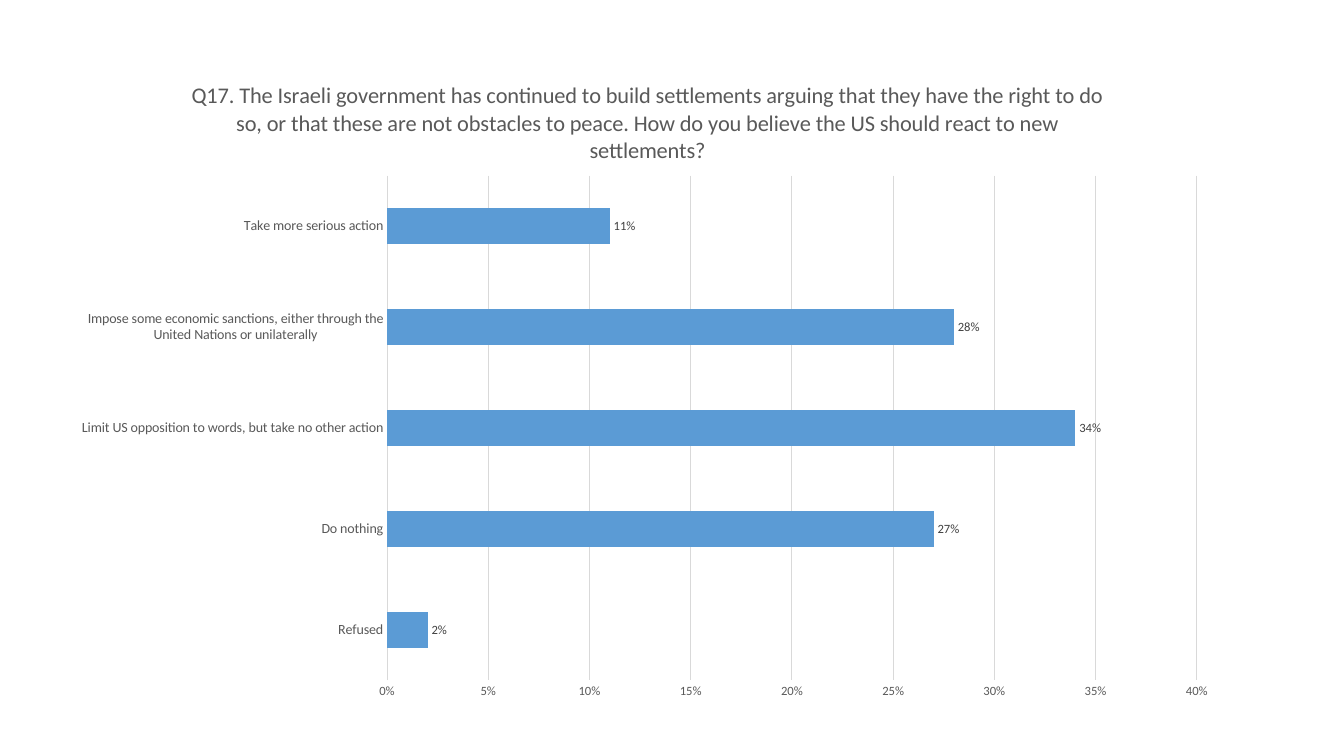
from dataclasses import dataclass

from pptx import Presentation
from pptx.chart.data import CategoryChartData
from pptx.dml.color import RGBColor
from pptx.enum.chart import XL_CHART_TYPE, XL_LABEL_POSITION, XL_TICK_MARK
from pptx.oxml import parse_xml
from pptx.oxml.ns import nsdecls, qn
from pptx.util import Inches, Pt


@dataclass(frozen=True)
class Theme:
    font: str = "Calibri"
    text: RGBColor = RGBColor(0x59, 0x59, 0x59)
    label: RGBColor = RGBColor(0x40, 0x40, 0x40)
    grid: RGBColor = RGBColor(0xD9, 0xD9, 0xD9)
    bar: RGBColor = RGBColor(0x5B, 0x9B, 0xD5)
    title_size: Pt = Pt(16)
    category_size: Pt = Pt(10)
    small_size: Pt = Pt(9)
    line_width: Pt = Pt(0.75)


theme = Theme()


def style_font(font, size, color):
    font.name = theme.font
    font.size = size
    font.bold = False
    font.color.rgb = color


def set_layout(element, index, target, **fractions):
    for old in element.findall(qn("c:layout")):
        element.remove(old)
    inner = f'<c:layoutTarget val="{target}"/>' if target else ""
    modes = "".join(f'<c:{k}Mode val="edge"/>' for k in "xy")
    values = "".join(f'<c:{k} val="{v}"/>' for k, v in fractions.items())
    element.insert(index, parse_xml(
        f'<c:layout {nsdecls("c")}><c:manualLayout>{inner}{modes}{values}'
        "</c:manualLayout></c:layout>"))


prs = Presentation()
prs.slide_width = Inches(13.33)
prs.slide_height = Inches(7.5)
s = prs.slides.add_slide(prs.slide_layouts[6])

responses = {
    "Refused": 0.02,
    "Do nothing": 0.27,
    "Limit US opposition to words, but take no other action": 0.34,
    "Impose some economic sanctions, either through the United Nations or unilaterally": 0.28,
    "Take more serious action": 0.11,
}
data = CategoryChartData(number_format="0%")
data.categories = list(responses)
data.add_series("Series 1", list(responses.values()))

chart = s.shapes.add_chart(
    XL_CHART_TYPE.BAR_CLUSTERED,
    Inches(0.58), Inches(0.49), Inches(11.64), Inches(6.59), data).chart
style_font(chart.font, theme.category_size, theme.text)
chart.has_legend = False

chart.has_title = True
title = chart.chart_title
title.include_in_layout = False
p = title.text_frame.paragraphs[0]
p.text = (
    "Q17. The Israeli government has continued to build settlements arguing "
    "that they have the right to do so, or that these are not obstacles to peace. "
    "How do you believe the US should react to new settlements?")
style_font(p.font, theme.title_size, theme.text)
set_layout(title._element, 1, None, x=0.11, y=0.04)

plot = chart.plots[0]
plot.gap_width = 182
plot.vary_by_categories = False
set_layout(chart._chartSpace.chart.plotArea, 0, "inner", x=0.28, y=0.19, w=0.69, h=0.76)

series = plot.series[0]
series.format.fill.solid()
series.format.fill.fore_color.rgb = theme.bar

plot.has_data_labels = True
labels = plot.data_labels
labels.show_value = True
labels.number_format = "0%"
labels.number_format_is_linked = False
labels.position = XL_LABEL_POSITION.OUTSIDE_END
style_font(labels.font, theme.small_size, theme.label)

category_axis, value_axis = chart.category_axis, chart.value_axis
for axis, size in ((category_axis, theme.category_size), (value_axis, theme.small_size)):
    axis.major_tick_mark = XL_TICK_MARK.NONE
    axis.minor_tick_mark = XL_TICK_MARK.NONE
    style_font(axis.tick_labels.font, size, theme.text)

value_axis.minimum_scale = 0
value_axis.maximum_scale = 0.4
value_axis.major_unit = 0.05
value_axis.tick_labels.number_format = "0%"
value_axis.tick_labels.number_format_is_linked = False
value_axis.has_major_gridlines = True
value_axis.format.line.fill.background()
for line in (category_axis.format.line, value_axis.major_gridlines.format.line):
    line.color.rgb = theme.grid
    line.width = theme.line_width

prs.save("out.pptx")
